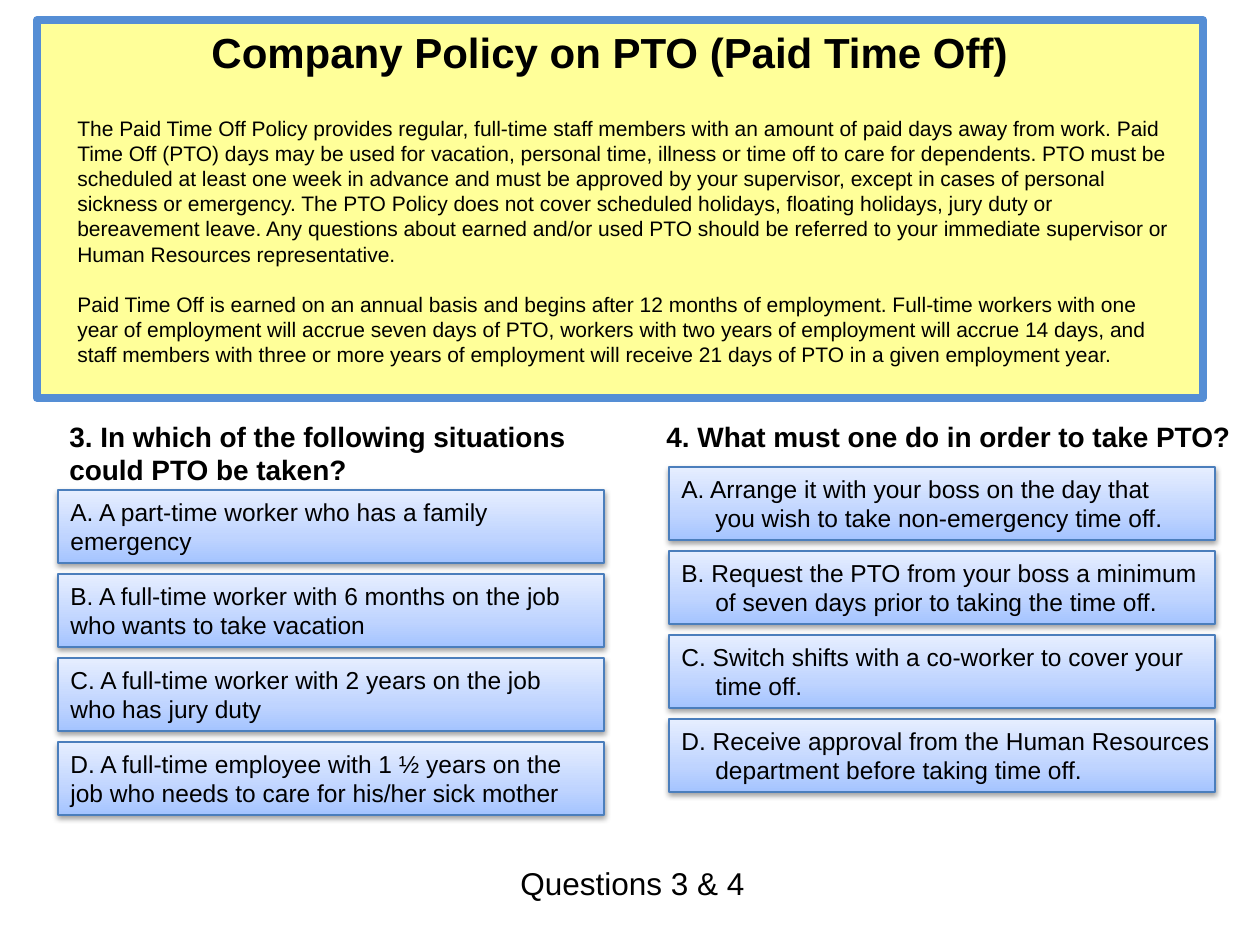
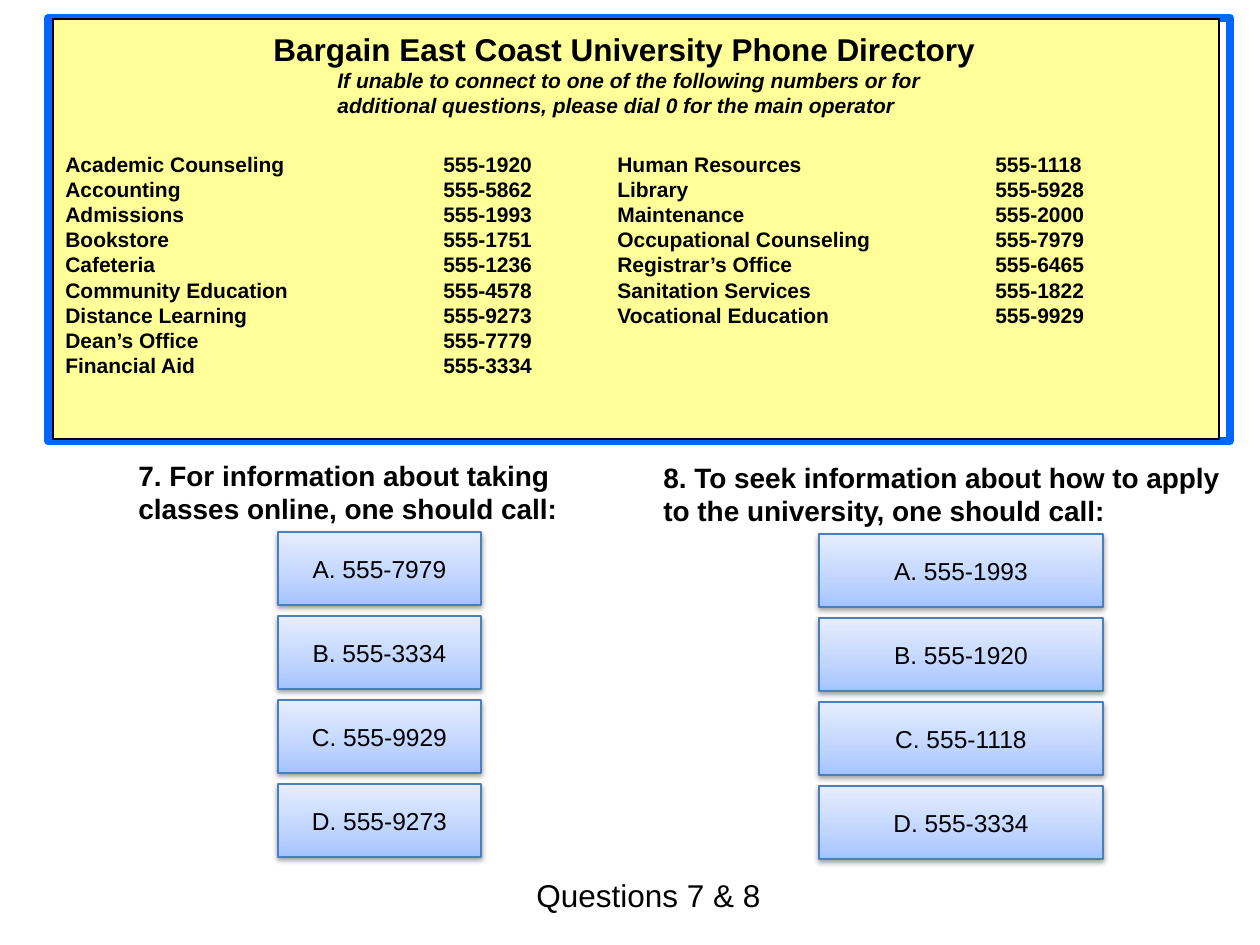
from pptx import Presentation
from pptx.util import Emu, Pt
from pptx.dml.color import RGBColor
from pptx.enum.shapes import MSO_SHAPE
from pptx.enum.text import PP_ALIGN, MSO_ANCHOR
from pptx.oxml import parse_xml
from pptx.oxml.ns import nsdecls, qn
from copy import deepcopy

PX = 914400 / 126
FONT = "Arial"
BLACK = RGBColor(0x00, 0x00, 0x00)
YELLOW = RGBColor(0xFF, 0xFF, 0x99)
STEEL_BLUE = RGBColor(0x55, 0x8E, 0xD5)
BRIGHT_BLUE = RGBColor(0x00, 0x66, 0xFF)
BUTTON_LINE = RGBColor(0x4B, 0x7E, 0xBC)
BUTTON_DARK = RGBColor(0xA4, 0xC4, 0xFF)
BUTTON_MID = RGBColor(0xBF, 0xD4, 0xFF)
BUTTON_LIGHT = RGBColor(0xE6, 0xEE, 0xFF)

BUTTON_H = 73
BUTTON_PITCH = 84
HANGING = 34
PHONE_TAB = 378

SHADOW = (
    f'<a:outerShdw {nsdecls("a")} blurRad="40000" dist="20000" dir="5400000" rotWithShape="0">'
    '<a:srgbClr val="000000"><a:alpha val="38000"/></a:srgbClr></a:outerShdw>'
)
TABS = f'<a:tabLst {nsdecls("a")}><a:tab pos="{round(PHONE_TAB * PX)}" algn="l"/></a:tabLst>'


def px(*lengths):
    """Turn px lengths into EMU."""
    return [Emu(round(n * PX)) for n in lengths]


def add_text(slide, box, text, size, bold=False, italic=False, shape=None):
    """Write text into the given shape, or into a new text box."""
    sp = shape or slide.shapes.add_textbox(*px(*box))
    tf = sp.text_frame
    tf.word_wrap = shape is None
    tf.text = text
    for p in tf.paragraphs:
        p.alignment = PP_ALIGN.LEFT
        for r in p.runs:
            r.font.name = FONT
            r.font.size = Pt(size)
            r.font.bold = bold
            r.font.italic = italic
            r.font.color.rgb = BLACK
    return tf


prs = Presentation()
prs.slide_width, prs.slide_height = px(1260, 945)
policy = prs.slides.add_slide(prs.slide_layouts[6])
directory = prs.slides.add_slide(prs.slide_layouts[6])

# Slide footers
add_text(policy, (508, 858, 294, 50), "Questions 3 & 4", 18)
add_text(directory, (524, 870, 294, 50), "Questions 7 & 8", 18)

# Framed panels
panels = [
    (policy, (37, 20, 1166, 378), YELLOW, STEEL_BLUE, 4.5),
    (directory, (48, 18, 1182, 423), None, BRIGHT_BLUE, 4.5),
    (directory, (53, 19, 1166, 420), YELLOW, BLACK, 0.75),
]
for slide, box, fill, line, weight in panels:
    sp = slide.shapes.add_shape(MSO_SHAPE.RECTANGLE, *px(*box))
    sp.shadow.inherit = False
    if fill:
        sp.fill.solid()
        sp.fill.fore_color.rgb = fill
    else:
        sp.fill.background()
    sp.line.color.rgb = line
    sp.line.width = Pt(weight)

# Policy text
add_text(policy, (199, 20, 851, 64), "Company Policy on PTO (Paid Time Off)", 24, bold=True)
policy_paragraphs = [
    "The Paid Time Off Policy provides regular, full-time staff members with an amount of paid "
    "days away from work. Paid Time Off (PTO) days may be used for vacation, personal time, "
    "illness or time off to care for dependents. PTO must be scheduled at least one week in "
    "advance and must be approved by your supervisor, except in cases of personal sickness or "
    "emergency. The PTO Policy does not cover scheduled holidays, floating holidays, jury duty "
    "or bereavement leave. Any questions about earned and/or used PTO should be referred to "
    "your immediate supervisor or Human Resources representative.",
    "Paid Time Off is earned on an annual basis and begins after 12 months of employment. "
    "Full-time workers with one year of employment will accrue seven days of PTO, workers with "
    "two years of employment will accrue 14 days, and staff members with three or more years "
    "of employment will receive 21 days of PTO in a given employment year.",
]
tf = add_text(policy, (65, 109, 1122, 266), "\n".join(policy_paragraphs), 12)
tf.paragraphs[1].space_before = Pt(14.4)

# Phone directory
add_text(directory, (261, 24, 740, 51),
         "Bargain East Coast University Phone Directory", 18, bold=True)
add_text(directory, (325, 61, 651, 64),
         "If unable to connect to one of the following numbers or for additional questions, "
         "please dial 0 for the main operator", 12, bold=True, italic=True)
phone_columns = [
    (53, [
        ("Academic Counseling", "555-1920"),
        ("Accounting", "555-5862"),
        ("Admissions", "555-1993"),
        ("Bookstore", "555-1751"),
        ("Cafeteria", "555-1236"),
        ("Community Education", "555-4578"),
        ("Distance Learning", "555-9273"),
        ("Dean’s Office", "555-7779"),
        ("Financial Aid", "555-3334"),
    ]),
    (605, [
        ("Human Resources", "555-1118"),
        ("Library", "555-5928"),
        ("Maintenance", "555-2000"),
        ("Occupational Counseling", "555-7979"),
        ("Registrar’s Office", "555-6465"),
        ("Sanitation Services", "555-1822"),
        ("Vocational Education", "555-9929"),
    ]),
]
for left, entries in phone_columns:
    lines = "\n".join("\t".join(entry) for entry in entries)
    tf = add_text(directory, (left, 145, 655, 240), lines, 12, bold=True)
    for p in tf.paragraphs:
        p._p.get_or_add_pPr().append(parse_xml(TABS))

# Questions: slide, text box, text, left, top and width of the buttons, alignment, hanging, answers
questions = [
    (policy, (57, 413, 537, 81),
     "3. In which of the following situations\ncould PTO be taken?",
     (58, 490, 546), PP_ALIGN.LEFT, 0, [
         "A part-time worker who has a family\nemergency",
         "A full-time worker with 6 months on the job\nwho wants to take vacation",
         "A full-time worker with 2 years on the job\nwho has jury duty",
         "A full-time employee with 1 ½ years on the\njob who needs to care for his/her sick mother",
     ]),
    (policy, (654, 413, 597, 47),
     "4. What must one do in order to take PTO?",
     (669, 467, 546), PP_ALIGN.LEFT, HANGING, [
         "Arrange it with your boss on the day that\nyou wish to take non-emergency time off.",
         "Request the PTO from your boss a minimum\nof seven days prior to taking the time off.",
         "Switch shifts with a co-worker to cover your\ntime off.",
         "Receive approval from the Human Resources\ndepartment before taking time off.",
     ]),
    (directory, (126, 452, 511, 81),
     "7. For information about taking classes online, one should call:",
     (278, 532, 203), PP_ALIGN.CENTER, 0,
     ["555-7979", "555-3334", "555-9929", "555-9273"]),
    (directory, (651, 454, 609, 81),
     "8. To seek information about how to apply\nto the university, one should call:",
     (819, 534, 284), PP_ALIGN.CENTER, 0,
     ["555-1993", "555-1920", "555-1118", "555-3334"]),
]
for slide, box, question, (left, top, width), align, hanging, answers in questions:
    add_text(slide, box, question, 16, bold=True)
    for i, (letter, answer) in enumerate(zip("ABCD", answers)):
        button_box = (left, top + i * BUTTON_PITCH, width, BUTTON_H)
        sp = slide.shapes.add_shape(MSO_SHAPE.ACTION_BUTTON_CUSTOM, *px(*button_box))
        sp.fill.gradient()
        sp.fill.gradient_angle = 90
        gs_list = sp.element.spPr.find(qn("a:gradFill")).find(qn("a:gsLst"))
        gs_list.insert(1, deepcopy(gs_list[0]))
        stops = [(0, BUTTON_DARK), (0.35, BUTTON_MID), (1, BUTTON_LIGHT)]
        for stop, (position, color) in zip(sp.fill.gradient_stops, stops):
            stop.position = position
            stop.color.rgb = color
        sp.line.color.rgb = BUTTON_LINE
        sp.line.width = Pt(0.75)
        sp.shadow.inherit = False
        sp.element.spPr.find(qn("a:effectLst")).append(parse_xml(SHADOW))
        tf = add_text(slide, button_box, f"{letter}. {answer}", 14, shape=sp)
        tf.vertical_anchor = MSO_ANCHOR.MIDDLE
        for p in tf.paragraphs:
            p.alignment = align
        for p in tf.paragraphs[1:]:
            p._p.get_or_add_pPr().set("marL", str(round(hanging * PX)))

prs.save("out.pptx")
